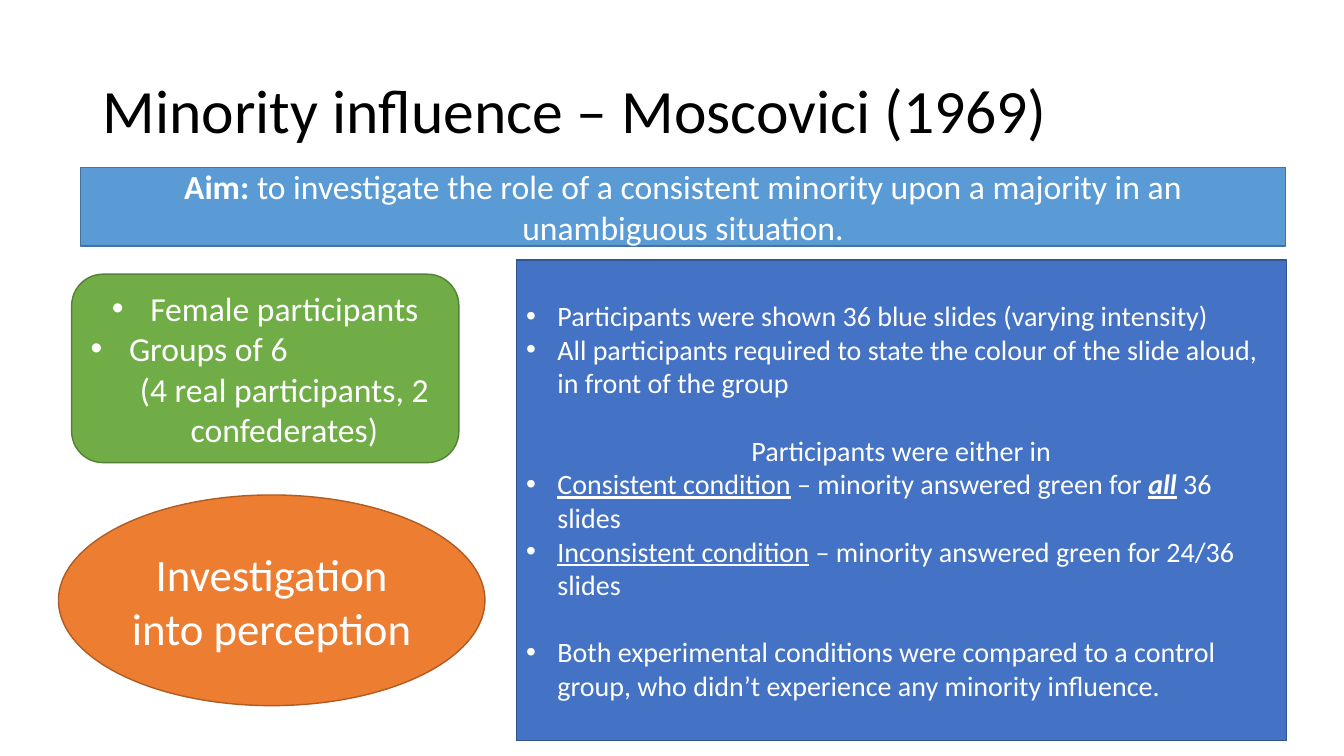
from lxml.etree import SubElement
from pptx import Presentation
from pptx.dml.color import RGBColor
from pptx.enum.shapes import MSO_SHAPE as Shape
from pptx.enum.text import MSO_ANCHOR as Anchor, PP_ALIGN as Align
from pptx.oxml.ns import qn
from pptx.util import Inches, Pt

WIDE, HIGH = Inches(13.33), Inches(7.5)
FONT = "Calibri"
WHITE = "FFFFFF"


def tint(code):
    return RGBColor.from_string(code)


def place(item, box):
    """Set an item's place from percentages of the slide's size."""
    left, top, wide, high = box
    item.left, item.width = int(WIDE * left / 100), int(WIDE * wide / 100)
    item.top, item.height = int(HIGH * top / 100), int(HIGH * high / 100)


def style(run, size, color, marks=""):
    """Format a run; marks holds any of the letters b, i and u."""
    font = run.font
    font.name, font.size = FONT, Pt(size)
    font.color.rgb = tint(color)
    font.bold, font.italic, font.underline = (m in marks for m in "biu")


def indent(para, depth, mark):
    """Indent a paragraph, with a hanging bullet if mark is true."""
    props = para._p.get_or_add_pPr()
    props.set("marL", str(Inches(depth)))
    if mark:
        props.set("indent", str(-Inches(depth)))
        SubElement(props, qn("a:buFont"), typeface="Arial")
        SubElement(props, qn("a:buChar"), char="•")


def write(frame, lines, size, depth=0):
    """Fill a frame from (align, bullet, space before, runs) lines."""
    for count, (align, mark, gap, runs) in enumerate(lines):
        para = frame.add_paragraph() if count else frame.paragraphs[0]
        para.alignment, para.space_before = align, Pt(gap)
        if depth:
            indent(para, depth, mark)
        for text, marks in runs:
            run = para.add_run()
            run.text = text
            style(run, size, WHITE, marks)


def panel(slide, kind, box, fill, edge):
    shape = slide.shapes.add_shape(kind, 0, 0, 0, 0)
    place(shape, box)
    shape.shadow.inherit = False
    shape.fill.solid()
    shape.fill.fore_color.rgb = tint(fill)
    shape.line.color.rgb = tint(edge)
    shape.line.width = Pt(1)
    frame = shape.text_frame
    frame.word_wrap, frame.vertical_anchor = True, Anchor.MIDDLE
    return frame


def title(slide, box):
    head = slide.shapes.title
    place(head, box)
    frame = head.text_frame
    frame.text = "Minority influence – Moscovici (1969)"
    frame.word_wrap, frame.vertical_anchor = True, Anchor.MIDDLE
    para = frame.paragraphs[0]
    para.alignment, para.line_spacing = Align.LEFT, 0.9
    style(para.runs[0], 44, "000000")


def aim(slide, box):
    frame = panel(slide, Shape.RECTANGLE, box, "5B9BD5", "43739E")
    write(frame, [(Align.CENTER, False, 0, [
        ("Aim:", "b"),
        (" to investigate the role of a consistent minority upon a majority"
         " in an unambiguous situation.", "")])], 24)


def sample(slide, box):
    frame = panel(slide, Shape.ROUNDED_RECTANGLE, box, "70AD47", "538035")
    write(frame, [
        (Align.CENTER, True, 0, [("Female participants", "")]),
        (Align.LEFT, True, 0, [("Groups of 6", "")]),
        (Align.CENTER, False, 0,
         [("(4 real participants, 2 confederates)", "")]),
    ], 24, 0.38)


def topic(slide, box):
    frame = panel(slide, Shape.OVAL, box, "ED7D31", "AF5C24")
    write(frame, [(Align.CENTER, False, 0,
                   [("Investigation into perception", "")])], 32)


def method(slide, box):
    frame = panel(slide, Shape.RECTANGLE, box, "4472C4", "325491")
    gap = 24
    points = [
        (0, [("Participants were shown 36 blue slides (varying intensity)",
              "")]),
        (0, [("All participants required to state the colour of the slide"
              " aloud, in front of the group", "")]),
        (0, [("Consistent condition", "u"),
             (" – minority answered green for ", ""),
             ("all", "biu"), (" 36 slides", "")]),
        (0, [("Inconsistent condition", "u"),
             (" – minority answered green for 24/36 slides", "")]),
        (gap, [("Both experimental conditions were compared to a control"
                " group, who didn’t experience any minority influence.",
                "")]),
    ]
    lines = [(Align.LEFT, True, *point) for point in points]
    lines.insert(2, (Align.CENTER, False, gap,
                     [("Participants were either in", "")]))
    write(frame, lines, 20, 0.31)
    frame.paragraphs[2]._p.get_or_add_pPr().set("marL", "0")


def main():
    deck = Presentation()
    deck.slide_width, deck.slide_height = WIDE, HIGH
    slide = deck.slides.add_slide(deck.slide_layouts[5])
    title(slide, (6.9, 5.33, 86.27, 19.33))
    aim(slide, (6, 22.13, 89.65, 10.4))
    sample(slide, (5.33, 36.27, 28.81, 24.93))
    topic(slide, (4.35, 65.47, 31.73, 27.87))
    method(slide, (38.41, 34.4, 57.31, 63.6))
    deck.save("out.pptx")


if __name__ == "__main__":
    main()
